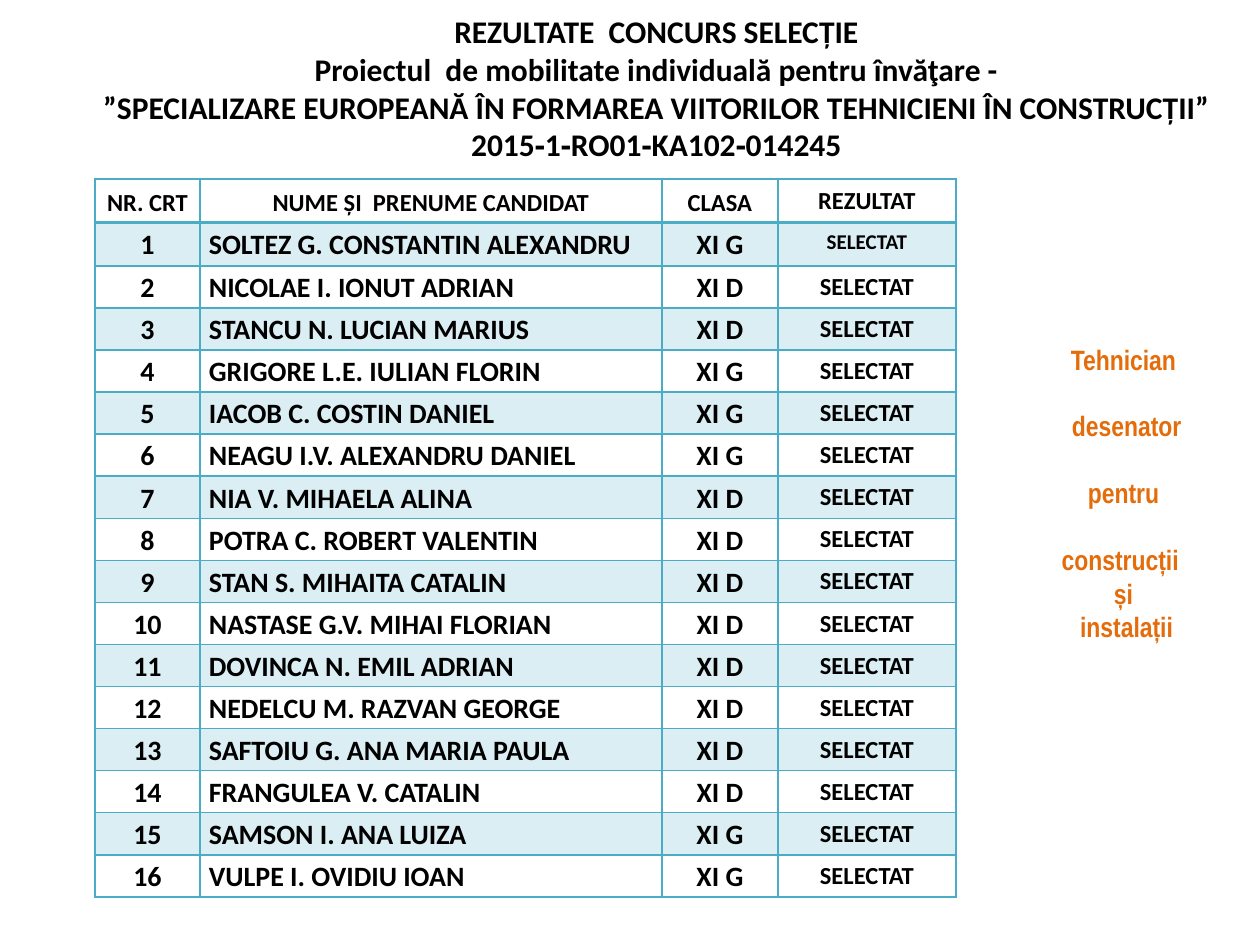
"""Build the slide with the results of the selection contest."""
from typing import NamedTuple

from lxml.etree import SubElement as Sub
from pptx import Presentation
from pptx.dml.color import RGBColor
from pptx.enum.text import MSO_ANCHOR as Anchor, PP_ALIGN as Align
from pptx.oxml.ns import qn
from pptx.util import Pt

SCALE = 914400 / 126
BLACK = RGBColor(0x00, 0x00, 0x00)
TEAL = RGBColor(0x4B, 0xAC, 0xC6)
PALE = RGBColor(0xDB, 0xEE, 0xF4)
ORANGE = RGBColor(0xE4, 0x6C, 0x0A)


class Box(NamedTuple):
    left: int
    top: int
    width: int
    height: int


class Font(NamedTuple):
    name: str
    size: int
    color: RGBColor


class Column(NamedTuple):
    head: str
    width: int
    align: Align
    size: int
    tight: bool


class Person(NamedTuple):
    name: str
    group: str


class Line(NamedTuple):
    text: str
    gap: int


TITLE = (
    "REZULTATE  CONCURS SELECȚIE",
    "Proiectul  de mobilitate individuală pentru învăţare -",
    "”SPECIALIZARE EUROPEANĂ ÎN FORMAREA VIITORILOR TEHNICIENI ÎN CONSTRUCȚII”",
    "2015‐1‐RO01‐KA102‐014245",
)
COLUMNS = (
    Column("NR. CRT", 105, Align.CENTER, 16, True),
    Column("NUME ȘI  PRENUME CANDIDAT", 462, Align.LEFT, 16, True),
    Column("CLASA", 116, Align.CENTER, 16, True),
    Column("REZULTAT", 178, Align.CENTER, 14, False),
)
PEOPLE = (
    Person("SOLTEZ G. CONSTANTIN ALEXANDRU", "XI G"),
    Person("NICOLAE I. IONUT ADRIAN", "XI D"),
    Person("STANCU N. LUCIAN MARIUS", "XI D"),
    Person("GRIGORE L.E. IULIAN FLORIN", "XI G"),
    Person("IACOB C. COSTIN DANIEL", "XI G"),
    Person("NEAGU I.V. ALEXANDRU DANIEL", "XI G"),
    Person("NIA V. MIHAELA ALINA", "XI D"),
    Person("POTRA C. ROBERT VALENTIN", "XI D"),
    Person("STAN S. MIHAITA CATALIN", "XI D"),
    Person("NASTASE G.V. MIHAI FLORIAN", "XI D"),
    Person("DOVINCA N. EMIL ADRIAN", "XI D"),
    Person("NEDELCU M. RAZVAN GEORGE", "XI D"),
    Person("SAFTOIU G. ANA MARIA PAULA", "XI D"),
    Person("FRANGULEA V. CATALIN", "XI D"),
    Person("SAMSON I. ANA LUIZA", "XI G"),
    Person("VULPE I. OVIDIU IOAN", "XI G"),
)
TRADE = (
    Line("Tehnician", 0),
    Line(" desenator", 19),
    Line(" pentru ", 19),
    Line("construcții ", 19),
    Line("și", 0),
    Line(" instalații", 0),
)


def px(count: int) -> int:
    return round(count * SCALE)


def style(para, font: Font, align: Align) -> None:
    para.alignment = align
    for run in para.runs:
        run.font.name = font.name
        run.font.size = Pt(font.size)
        run.font.bold = True
        run.font.color.rgb = font.color


def add_text(slide, box: Box, lines: tuple, font: Font):
    frame = slide.shapes.add_textbox(*map(px, box)).text_frame
    frame.word_wrap = True
    frame.text = "\n".join(line.text for line in lines)
    for para, line in zip(frame.paragraphs, lines):
        para.space_before = Pt(line.gap)
        style(para, font, Align.CENTER)
    return frame


def edge(cell, side: str, width: int) -> None:
    props = cell._tc.get_or_add_tcPr()
    line = Sub(props, qn(f"a:{side}"), w=str(Pt(width)))
    Sub(Sub(line, qn("a:solidFill")), qn("a:srgbClr"), val=str(TEAL))


def fill_cell(cell, text: str, row: int, col: Column) -> None:
    head = row == 0
    for side in ("lnL", "lnR", "lnT", "lnB"):
        thick = (row, side) in ((0, "lnB"), (1, "lnT"))
        edge(cell, side, 2 if thick else 1)
    if row % 2:
        cell.fill.solid()
        cell.fill.fore_color.rgb = PALE
    else:
        cell.fill.background()
    cell.vertical_anchor = Anchor.MIDDLE if head else Anchor.TOP
    cell.text_frame.text = text
    para = cell.text_frame.paragraphs[0]
    if col.tight:
        cell.margin_left = cell.margin_right = px(9)
        cell.margin_top = cell.margin_bottom = 0
        para.line_spacing = 1.15
        para.space_after = Pt(10)
    size = 14 if head else 12 if text == "SELECTAT" and row == 1 else col.size
    style(para, Font("Calibri", size, BLACK), Align.CENTER if head else col.align)


def add_results(slide, box: Box) -> None:
    rows = [tuple(col.head for col in COLUMNS)]
    rows += [(str(num), who.name, who.group, "SELECTAT")
             for num, who in enumerate(PEOPLE, 1)]
    table = slide.shapes.add_table(len(rows), len(COLUMNS), *map(px, box)).table
    table.first_row = table.horz_banding = False
    for num, row in enumerate(rows):
        table.rows[num].height = px((44, 43)[num] if num < 2 else 42)
        for pos, col in enumerate(COLUMNS):
            table.columns[pos].width = px(col.width)
            fill_cell(table.cell(num, pos), row[pos], num, col)


def main() -> None:
    deck = Presentation()
    deck.slide_width, deck.slide_height = px(1260), px(945)
    slide = deck.slides.add_slide(deck.slide_layouts[6])
    title = add_text(slide, Box(53, 12, 1207, 168),
                     tuple(Line(text, 0) for text in TITLE),
                     Font("Calibri", 18, BLACK))
    title.margin_top = title.margin_bottom = 0
    add_results(slide, Box(95, 179, 861, 717))
    add_text(slide, Box(1029, 336, 189, 318), TRADE,
             Font("Arial Narrow", 16, ORANGE))
    deck.save("out.pptx")


if __name__ == "__main__":
    main()
